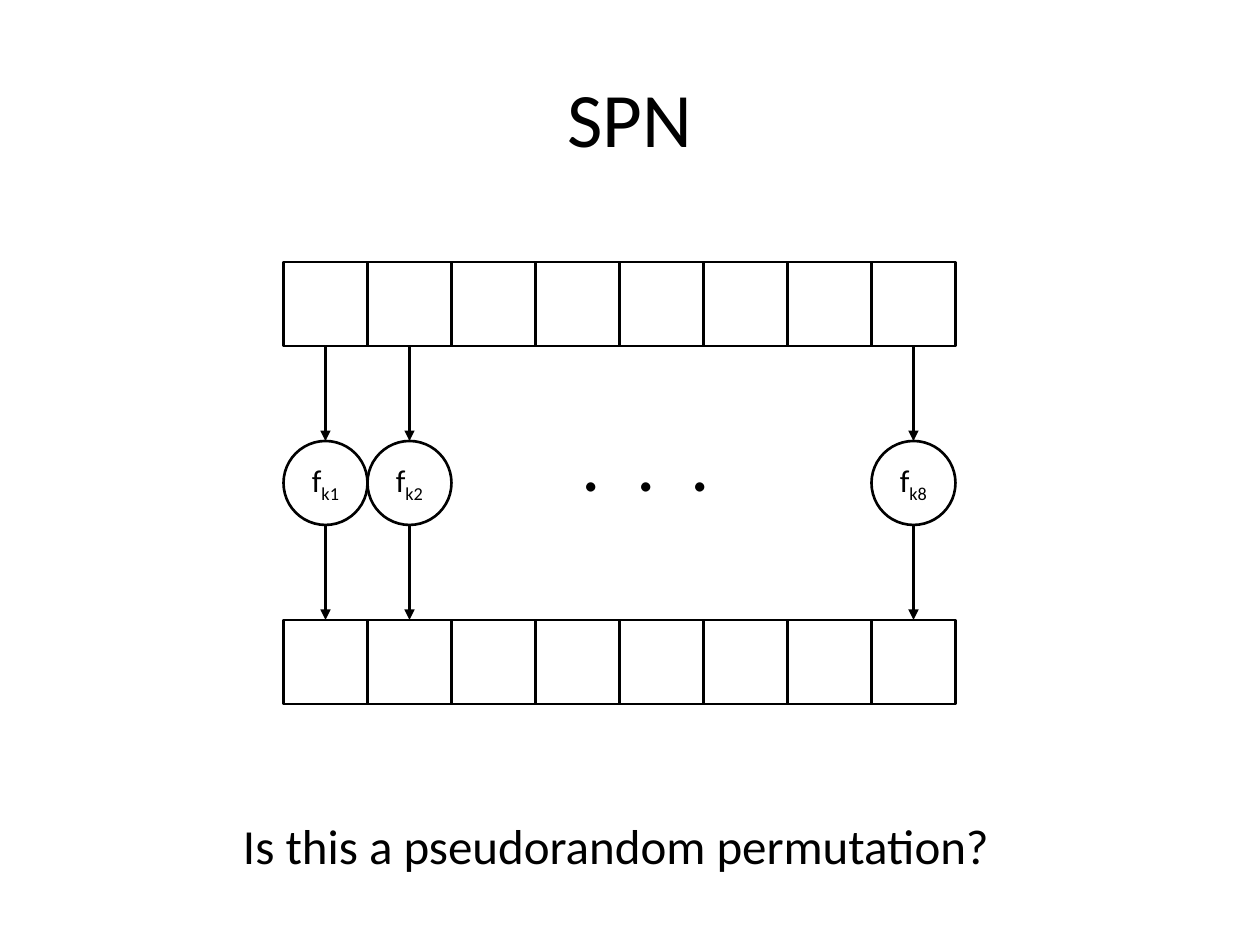
from dataclasses import dataclass

from lxml import etree
from pptx import Presentation
from pptx.dml.color import RGBColor
from pptx.enum.shapes import MSO_CONNECTOR, MSO_SHAPE
from pptx.enum.text import MSO_ANCHOR, MSO_AUTO_SIZE, PP_ALIGN
from pptx.oxml.ns import qn
from pptx.util import Inches, Pt

RECTANGLE, OVAL = MSO_SHAPE.RECTANGLE, MSO_SHAPE.OVAL
STRAIGHT = MSO_CONNECTOR.STRAIGHT
MIDDLE, TOP = MSO_ANCHOR.MIDDLE, MSO_ANCHOR.TOP
CENTER, LEFT = PP_ALIGN.CENTER, PP_ALIGN.LEFT
FIT_SHAPE, NO_FIT = MSO_AUTO_SIZE.SHAPE_TO_FIT_TEXT, MSO_AUTO_SIZE.NONE

COLOURS = {"ink": "000000", "paper": "FFFFFF"}
FONT = "Calibri"
LINE_WIDTH = Pt(1.5)

# Block grid, in inches
BLOCKS = 8
CELL = 2 / 3
GRID_LEFT = 2.25
INPUT_TOP, ROUND_TOP, OUTPUT_TOP = 2.08, 3.5, 4.92


@dataclass(frozen=True)
class Label:
    text: str
    left: float
    top: float
    width: float
    height: float
    size: int
    centred: bool = False


LABELS = [
    Label("SPN", 0.5, 0.3, 9, 1.25, 44, centred=True),
    Label(".  .  .", 4.52, 3.24, 1.23, 0.84, 44),
    Label("Is this a pseudorandom permutation?", 1.83, 6.42, 6.19, 0.57, 28),
]
KEYED_BLOCKS = [1, 2, 8]


def colour(name: str) -> RGBColor:
    return RGBColor.from_string(COLOURS[name])


def add_span(para, text: str, size: int, subscript: bool = False) -> None:
    span = para.add_run()
    span.text = text
    span.font.name = FONT
    span.font.size = Pt(size)
    span.font.color.rgb = colour("ink")
    if subscript:
        span.font._element.set("baseline", "-25000")


def add_label(page, label: Label) -> None:
    box = page.shapes.add_textbox(
        Inches(label.left), Inches(label.top), Inches(label.width), Inches(label.height))
    frame = box.text_frame
    frame.word_wrap = label.centred
    frame.auto_size = NO_FIT if label.centred else FIT_SHAPE
    frame.vertical_anchor = MIDDLE if label.centred else TOP
    para = frame.paragraphs[0]
    para.alignment = CENTER if label.centred else LEFT
    add_span(para, label.text, label.size)


def block_left(number: int) -> float:
    return GRID_LEFT + (number - 1) * CELL


def add_cell(page, kind: MSO_SHAPE, number: int, top: float):
    cell = page.shapes.add_shape(
        kind, Inches(block_left(number)), Inches(top), Inches(CELL), Inches(CELL))
    cell.shadow.inherit = False
    cell.fill.background()
    cell.line.color.rgb = colour("ink")
    cell.line.width = LINE_WIDTH
    return cell


def add_function(page, number: int) -> None:
    frame = add_cell(page, OVAL, number, ROUND_TOP).text_frame
    frame.word_wrap = False
    frame.vertical_anchor = MIDDLE
    para = frame.paragraphs[0]
    para.alignment = CENTER
    add_span(para, "f", 18)
    add_span(para, f"k{number}", 18, subscript=True)


def add_arrow(page, number: int, start: float, end: float) -> None:
    middle = Inches(block_left(number) + CELL / 2)
    arrow = page.shapes.add_connector(STRAIGHT, middle, Inches(start), middle, Inches(end))
    arrow.line.color.rgb = colour("ink")
    arrow.line.width = LINE_WIDTH
    etree.SubElement(arrow.line._get_or_add_ln(), qn("a:tailEnd"), type="triangle")
    etree.SubElement(arrow._element.spPr, qn("a:effectLst"))


def main() -> None:
    deck = Presentation()
    deck.slide_width, deck.slide_height = Inches(10), Inches(7.5)
    page = deck.slides.add_slide(deck.slide_layouts[6])
    page.background.fill.solid()
    page.background.fill.fore_color.rgb = colour("paper")

    # Input and output blocks
    for top in (INPUT_TOP, OUTPUT_TOP):
        for number in range(1, BLOCKS + 1):
            add_cell(page, RECTANGLE, number, top)

    # Keyed functions with arrows in and out
    for number in KEYED_BLOCKS:
        add_arrow(page, number, INPUT_TOP + CELL, ROUND_TOP)
        add_function(page, number)
        add_arrow(page, number, ROUND_TOP + CELL, OUTPUT_TOP)

    # Title, ellipsis and question
    for label in LABELS:
        add_label(page, label)

    deck.save("out.pptx")


if __name__ == "__main__":
    main()
